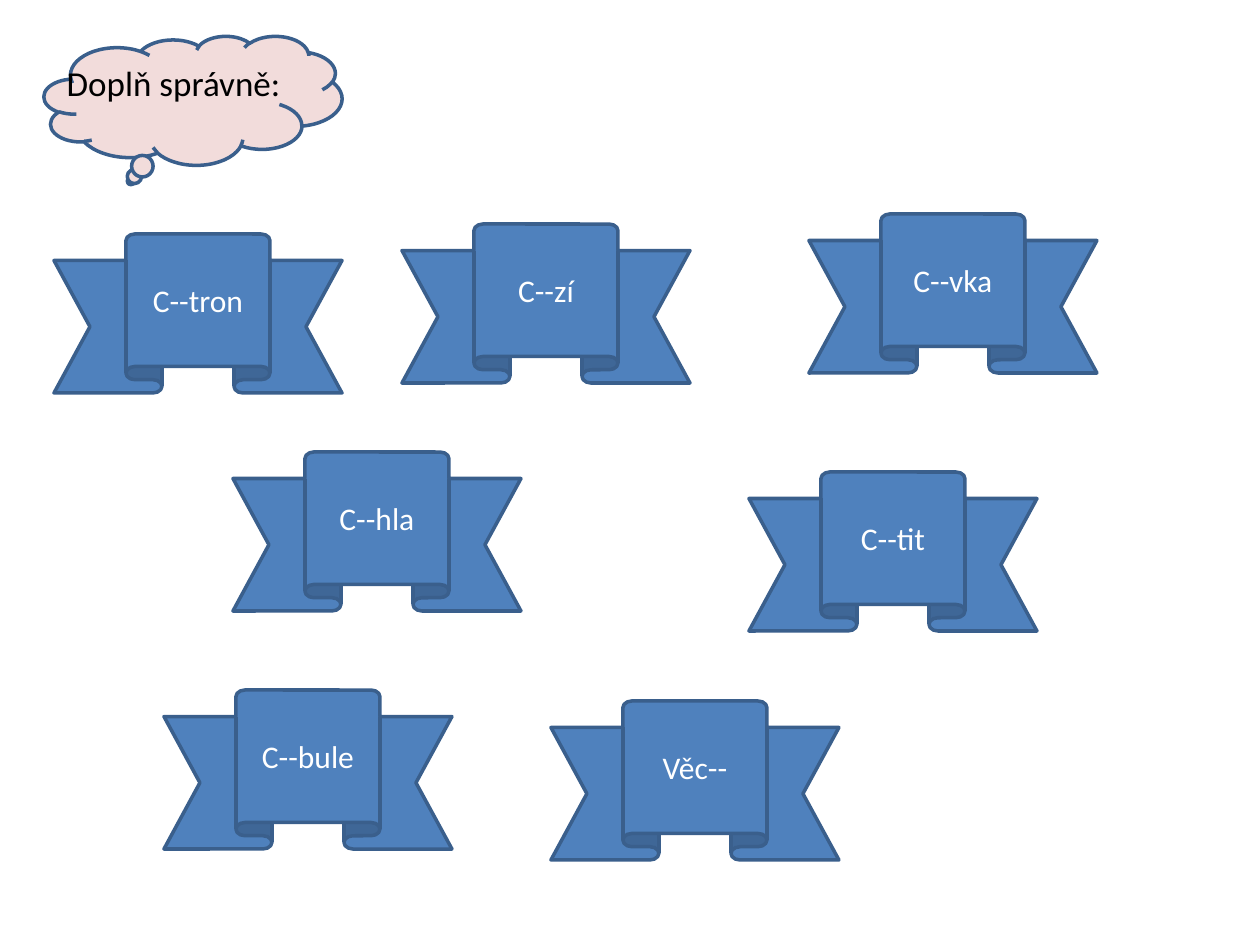
import pptx
import pptx.util
import pptx.dml.color
import pptx.enum.shapes
import pptx.enum.text

PX = 914400 / 126
SHAPE = pptx.enum.shapes.MSO_SHAPE
ALIGN = pptx.enum.text.PP_ALIGN
ANCHOR = pptx.enum.text.MSO_ANCHOR
RGB = pptx.dml.color.RGBColor

BLACK = RGB(0x00, 0x00, 0x00)
WHITE = RGB(0xFF, 0xFF, 0xFF)
PINK = RGB(0xF2, 0xDC, 0xDB)
BLUE = RGB(0x4F, 0x81, 0xBD)
EDGE = RGB(0x3A, 0x5F, 0x8C)

RIBBON_SIZE = (288, 159)
RIBBONS = [
    ("C--tron", 54, 234),
    ("C--zí", 402, 224),
    ("C--hla", 233, 452),
    ("C--bule", 164, 690),
    ("Věc--", 551, 701),
    ("C--tit", 749, 472),
    ("C--vka", 809, 214),
]


def emu(*sizes):
    return [round(size * PX) for size in sizes]


def write(shape, text, size, color, align, anchor):
    frame = shape.text_frame
    frame.text = text
    frame.word_wrap = True
    frame.auto_size = pptx.enum.text.MSO_AUTO_SIZE.NONE
    frame.vertical_anchor = anchor
    line = frame.paragraphs[0]
    line.alignment = align
    font = line.runs[0].font
    font.name = "Calibri"
    font.size = pptx.util.Pt(size)
    font.color.rgb = color


def add_shape(slide, kind, box, fill):
    shape = slide.shapes.add_shape(kind, *emu(*box))
    shape.shadow.inherit = False
    shape.fill.solid()
    shape.fill.fore_color.rgb = fill
    shape.line.color.rgb = EDGE
    shape.line.width = pptx.util.Pt(2)
    return shape


def add_ribbon(slide, text, left, top):
    ribbon = add_shape(slide, SHAPE.UP_RIBBON, (left, top, *RIBBON_SIZE), BLUE)
    write(ribbon, text, 18, WHITE, ALIGN.CENTER, ANCHOR.MIDDLE)


def set_title(slide, text, box):
    title = slide.shapes.title
    title.left, title.top, title.width, title.height = emu(*box)
    write(title, text, 20, BLACK, ALIGN.LEFT, ANCHOR.TOP)
    return title


def main():
    deck = pptx.Presentation()
    deck.slide_width, deck.slide_height = emu(1260, 945)
    slide = deck.slides.add_slide(deck.slide_layouts[5])

    cloud = add_shape(slide, SHAPE.CLOUD_CALLOUT, (44, 36, 298, 129), PINK)
    title = set_title(slide, "Doplň správně:", (54, 55, 507, 55))
    # The title lies in front of its cloud.
    cloud._element.addnext(title._element)

    for text, left, top in RIBBONS:
        add_ribbon(slide, text, left, top)
    deck.save("out.pptx")


if __name__ == "__main__":
    main()
